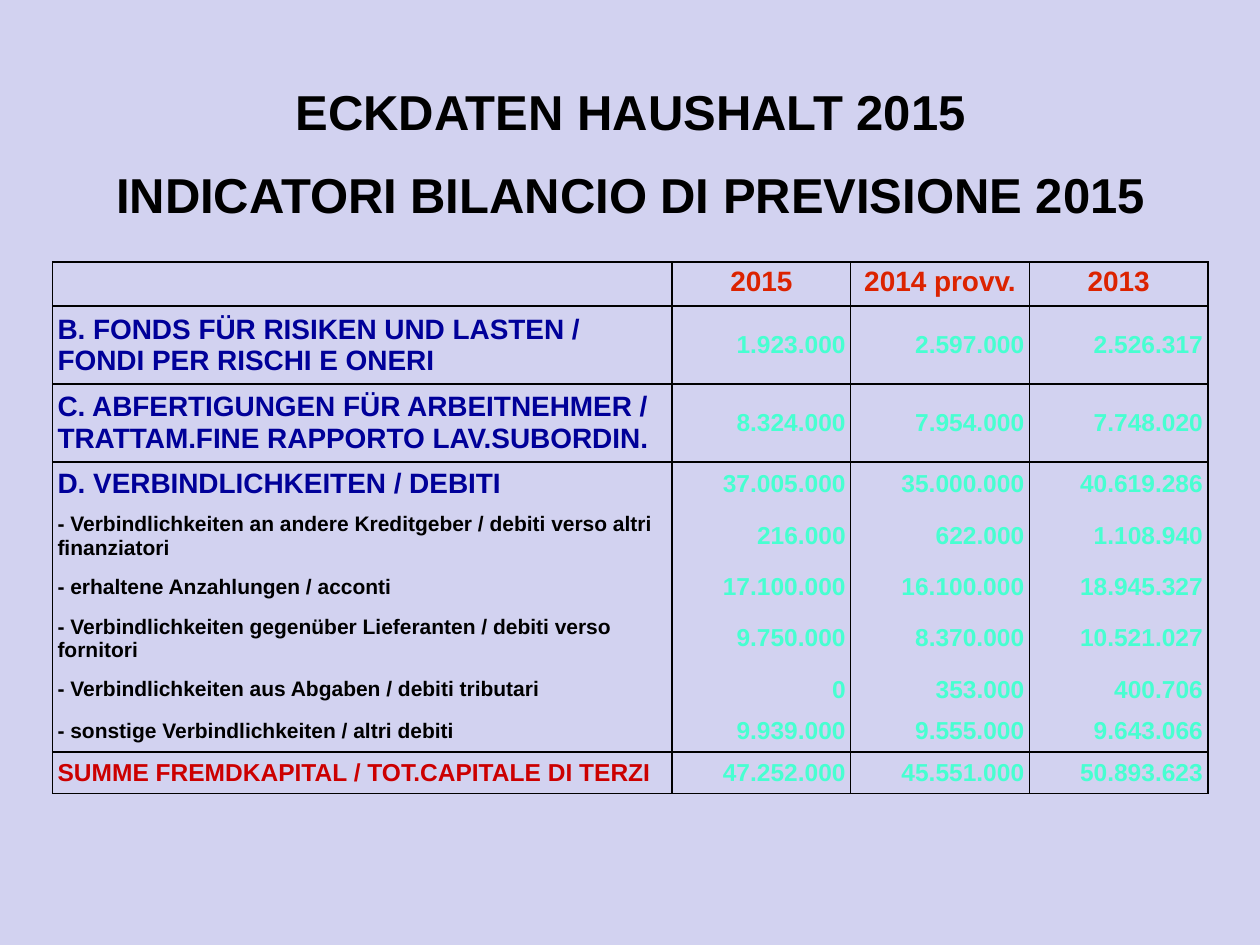
"""Build the slide with the 2015 budget indicators table."""
from lxml import etree
from pptx import Presentation
from pptx import util as u
from pptx.dml.color import RGBColor
from pptx.enum import text
from pptx.oxml import ns

COLORS = {"background": "D2D2F0", "black": "000000", "header": "DC2300",
          "section": "000099", "total": "CC0000", "figure": "47FFD1"}
TITLES = ["ECKDATEN HAUSHALT 2015", "INDICATORI BILANCIO DI PREVISIONE 2015"]
HEADERS = ["", "2015", "2014 provv.", "2013"]
ROWS = [
    ("section", 1.57, "B. FONDS FÜR RISIKEN UND LASTEN / FONDI PER RISCHI E ONERI",
     "1.923.000", "2.597.000", "2.526.317"),
    ("section", 1.57, "C. ABFERTIGUNGEN FÜR ARBEITNEHMER / TRATTAM.FINE RAPPORTO LAV.SUBORDIN.",
     "8.324.000", "7.954.000", "7.748.020"),
    ("section", 0.89, "D. VERBINDLICHKEITEN / DEBITI",
     "37.005.000", "35.000.000", "40.619.286"),
    ("detail", 1.22, "- Verbindlichkeiten an andere Kreditgeber / debiti verso altri finanziatori",
     "216.000", "622.000", "1.108.940"),
    ("detail", 0.84, "- erhaltene Anzahlungen / acconti",
     "17.100.000", "16.100.000", "18.945.327"),
    ("detail", 1.22, "- Verbindlichkeiten gegenüber Lieferanten / debiti verso fornitori",
     "9.750.000", "8.370.000", "10.521.027"),
    ("detail", 0.84, "- Verbindlichkeiten aus Abgaben / debiti tributari",
     "0", "353.000", "400.706"),
    ("detail", 0.84, "- sonstige Verbindlichkeiten / altri debiti",
     "9.939.000", "9.555.000", "9.643.066"),
    ("total", 0.84, "SUMME FREMDKAPITAL / TOT.CAPITALE DI TERZI",
     "47.252.000", "45.551.000", "50.893.623"),
]
LABEL_STYLES = {"section": (16, "section"), "detail": (12, "black"), "total": (14, "total")}
HEADER_HEIGHT = 0.89
COLUMN_WIDTHS = [12.49, 3.6, 3.6, 3.6]
ALIGN = text.PP_ALIGN


def write(para, words, size, color, align):
    para.text = words
    para.alignment = align
    for span in para.runs:
        span.font.name = "Arial"
        span.font.size = u.Pt(size)
        span.font.bold = True
        span.font.color.rgb = RGBColor.from_string(COLORS[color])


def set_borders(cell, visible):
    properties = cell._tc.get_or_add_tcPr()
    for side in "LRTB":
        line = etree.SubElement(properties, ns.qn(f"a:ln{side}"), w=str(u.Pt(1)))
        if side in visible:
            fill = etree.SubElement(line, ns.qn("a:solidFill"))
            etree.SubElement(fill, ns.qn("a:srgbClr"), val=COLORS["black"])
        else:
            etree.SubElement(line, ns.qn("a:noFill"))


def add_title(page):
    box = page.shapes.add_textbox(u.Cm(1.98), u.Cm(1.52), u.Cm(21.46), u.Cm(3.07))
    frame = box.text_frame
    frame.word_wrap = False
    frame.text = "\n".join(TITLES)
    for para, title in zip(frame.paragraphs, TITLES):
        write(para, title, 28, "black", ALIGN.CENTER)
    frame.paragraphs[1].space_before = u.Pt(13.5)


def add_figures(page):
    kinds = ["header"] + [row[0] for row in ROWS]
    heights = [HEADER_HEIGHT] + [row[1] for row in ROWS]
    contents = [HEADERS] + [row[2:] for row in ROWS]
    table = page.shapes.add_table(
        len(contents), len(HEADERS), u.Cm(1.06), u.Cm(5.28),
        u.Cm(sum(COLUMN_WIDTHS)), u.Cm(sum(heights))).table
    table.first_row = table.horz_banding = False
    for column, width in zip(table.columns, COLUMN_WIDTHS):
        column.width = u.Cm(width)
    for r, (kind, height, words) in enumerate(zip(kinds, heights, contents)):
        table.rows[r].height = u.Cm(height)
        top = "" if kind == "detail" else "T"
        bottom = "" if "detail" in kinds[r + 1:r + 2] else "B"
        for c, word in enumerate(words):
            cell = table.cell(r, c)
            set_borders(cell, "LR" + top + bottom)
            cell.fill.background()
            cell.vertical_anchor = text.MSO_ANCHOR.MIDDLE
            cell.margin_left = cell.margin_right = u.Cm(0.1)
            cell.margin_top = cell.margin_bottom = u.Cm(0.05)
            para = cell.text_frame.paragraphs[0]
            if kind == "header":
                write(para, word, 16, "header", ALIGN.CENTER)
                para.line_spacing = 0.81
            elif c == 0:
                write(para, word, *LABEL_STYLES[kind], ALIGN.LEFT)
            else:
                write(para, word, 14, "figure", ALIGN.RIGHT)


def main():
    deck = Presentation()
    deck.slide_width, deck.slide_height = u.Cm(25.4), u.Cm(19.05)
    page = deck.slides.add_slide(deck.slide_layouts[6])
    page.background.fill.solid()
    page.background.fill.fore_color.rgb = RGBColor.from_string(COLORS["background"])
    add_title(page)
    add_figures(page)
    deck.save("out.pptx")


if __name__ == "__main__":
    main()
